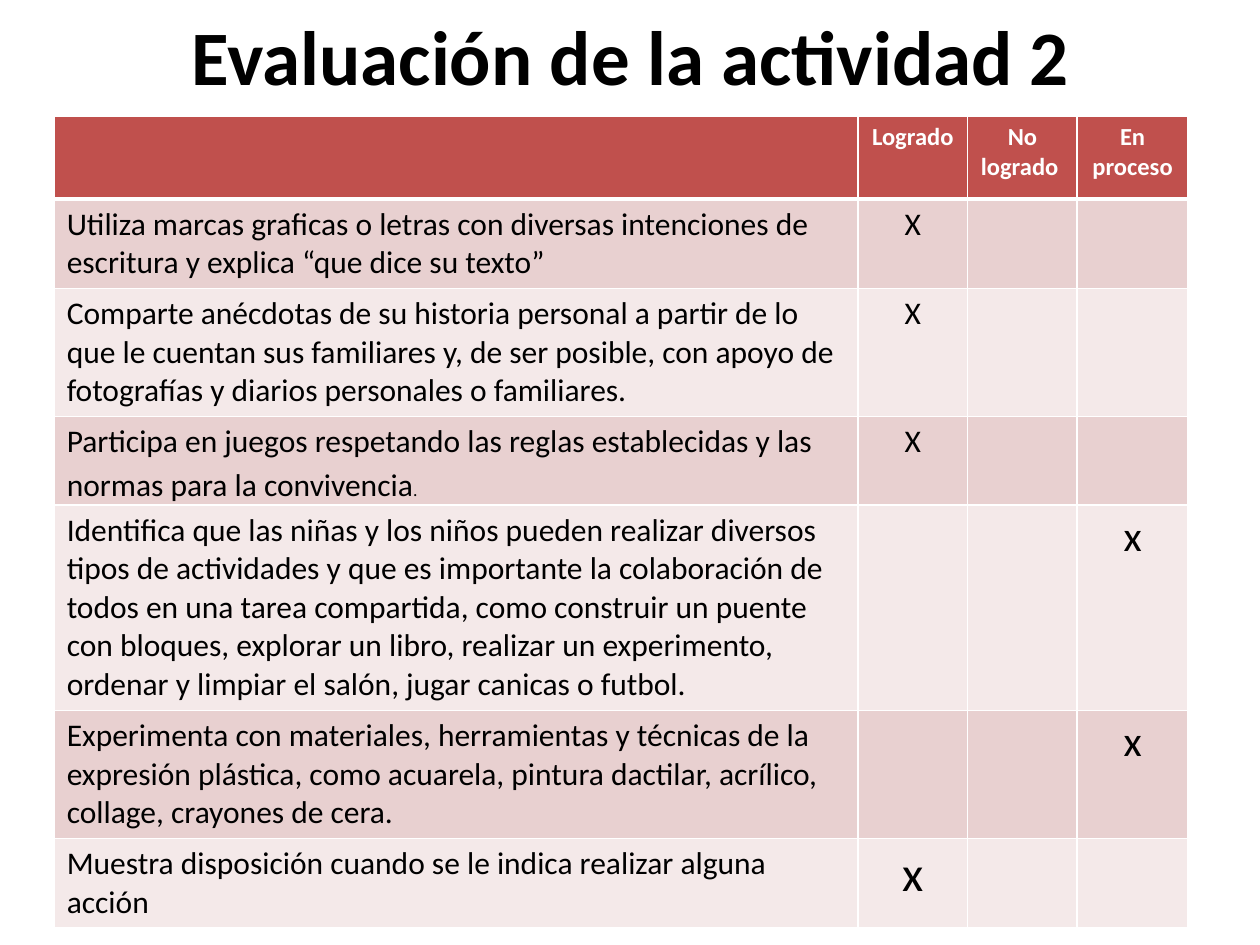
"""Build a slide with the evaluation table of a classroom activity."""
from lxml import etree
from pptx import Presentation
from pptx.dml.color import RGBColor
from pptx.enum.text import MSO_ANCHOR, PP_ALIGN
from pptx.oxml.ns import qn
from pptx.util import Inches, Pt

CENTER, LEFT = PP_ALIGN.CENTER, PP_ALIGN.LEFT
MIDDLE = MSO_ANCHOR.MIDDLE
TITLE_ONLY = 5

BLACK = RGBColor(0x00, 0x00, 0x00)
WHITE = RGBColor(0xFF, 0xFF, 0xFF)
RED = RGBColor(0xC0, 0x50, 0x4D)
ROSE = RGBColor(0xE8, 0xD0, 0xD0)
PALE_ROSE = RGBColor(0xF4, 0xE9, 0xE9)

TITLE_FORMAT = {"name": "Calibri", "size": Pt(44), "bold": True}
HEADER_FORMAT = {"name": "Calibri", "size": Pt(14), "bold": True}
BODY_FORMAT = {"name": "Calibri", "size": Pt(18), "bold": False}

COLUMN_WIDTHS = (6.38, 0.87, 0.87, 0.88)
HEADER_HEIGHT = 0.66
HEADERS = ("", "Logrado", "No logrado ", "En proceso")
ACHIEVED, IN_PROCESS = 1, 3
GAMES_ROW = 3

# Each entry: wording, row height, marked column, mark, mark size
CRITERIA = (
    ("Utiliza marcas graficas o letras con diversas intenciones de escritura "
     "y explica “que dice su texto”", 0.7, ACHIEVED, "X", 18),
    ("Comparte anécdotas de su historia personal a partir de lo que le cuentan "
     "sus familiares y, de ser posible, con apoyo de fotografías y diarios "
     "personales o familiares.", 1.01, ACHIEVED, "X", 18),
    ("Participa en juegos respetando las reglas establecidas y las normas para "
     "la convivencia", 0.7, ACHIEVED, "X", 18),
    ("Identifica que las niñas y los niños pueden realizar diversos tipos de "
     "actividades y que es importante la colaboración de todos en una tarea "
     "compartida, como construir un puente con bloques, explorar un libro, "
     "realizar un experimento, ordenar y limpiar el salón, jugar canicas o "
     "futbol.", 1.63, IN_PROCESS, "x", 24),
    ("Experimenta con materiales, herramientas y técnicas de la expresión "
     "plástica, como acuarela, pintura dactilar, acrílico, collage, crayones "
     "de cera.", 1.01, IN_PROCESS, "x", 24),
    ("Muestra disposición cuando se le indica realizar alguna acción",
     0.7, ACHIEVED, "x", 28),
)


def add_span(para, text, color, formats):
    """Add a run of text with the given colour and font values."""
    span = para.add_run()
    span.text = text
    span.font.color.rgb = color
    for name, value in formats.items():
        setattr(span.font, name, value)


def add_borders(cell, widths):
    """Draw white cell borders, with widths in points by side."""
    properties = cell._tc.get_or_add_tcPr()
    for side, width in widths.items():
        line = etree.SubElement(properties, qn(f"a:ln{side}"), w=str(Pt(width)))
        fill = etree.SubElement(line, qn("a:solidFill"))
        etree.SubElement(fill, qn("a:srgbClr"), val=str(WHITE))


def style_cell(cell, row):
    """Give a cell the borders and fill of its row."""
    widths = {"L": 1, "R": 1, "T": 3 if row == 1 else 1, "B": 3 if row == 0 else 1}
    add_borders(cell, widths)
    cell.fill.solid()
    cell.fill.fore_color.rgb = RED if row == 0 else ROSE if row % 2 else PALE_ROSE


def write_cell(cell, text, alignment, color, formats):
    """Write one aligned paragraph in a cell."""
    para = cell.text_frame.paragraphs[0]
    para.alignment = alignment
    add_span(para, text, color, formats)


def format_games_cell(cell):
    """Set the looser spacing and the small full stop of the games criterion."""
    cell.margin_top = cell.margin_bottom = 0
    para = cell.text_frame.paragraphs[0]
    para.line_spacing = 1.15
    para.space_after = Pt(10)
    add_span(para, ".", BLACK, BODY_FORMAT | {"size": Pt(10)})


def add_title(page, text):
    """Place the slide title."""
    title = page.shapes.title
    box = {"left": 0.51, "top": -0.19, "width": 9, "height": 1.25}
    for name, value in box.items():
        setattr(title, name, Inches(value))
    title.text_frame.vertical_anchor = MIDDLE
    para = title.text_frame.paragraphs[0]
    para.alignment = CENTER
    add_span(para, text, BLACK, TITLE_FORMAT)


def add_evaluation_table(page):
    """Add the table of criteria and marks."""
    heights = [HEADER_HEIGHT] + [criterion[1] for criterion in CRITERIA]
    table = page.shapes.add_table(
        len(heights), len(COLUMN_WIDTHS), Inches(0.43), Inches(0.92),
        Inches(sum(COLUMN_WIDTHS)), Inches(sum(heights))).table
    for column, width in zip(table.columns, COLUMN_WIDTHS):
        column.width = Inches(width)
    for index, height in enumerate(heights):
        table.rows[index].height = Inches(height)
        for cell in table.rows[index].cells:
            style_cell(cell, index)
    for column, header in enumerate(HEADERS):
        if header:
            write_cell(table.cell(0, column), header, CENTER, WHITE, HEADER_FORMAT)
    for row, (text, _, column, mark, size) in enumerate(CRITERIA, start=1):
        write_cell(table.cell(row, 0), text, LEFT, BLACK, BODY_FORMAT)
        write_cell(table.cell(row, column), mark, CENTER, BLACK,
                   BODY_FORMAT | {"size": Pt(size)})
    format_games_cell(table.cell(GAMES_ROW, 0))


def main():
    """Build and save the deck."""
    deck = Presentation()
    deck.slide_width, deck.slide_height = Inches(10), Inches(7.5)
    page = deck.slides.add_slide(deck.slide_layouts[TITLE_ONLY])
    add_title(page, "Evaluación de la actividad 2")
    add_evaluation_table(page)
    deck.save("out.pptx")


if __name__ == "__main__":
    main()
